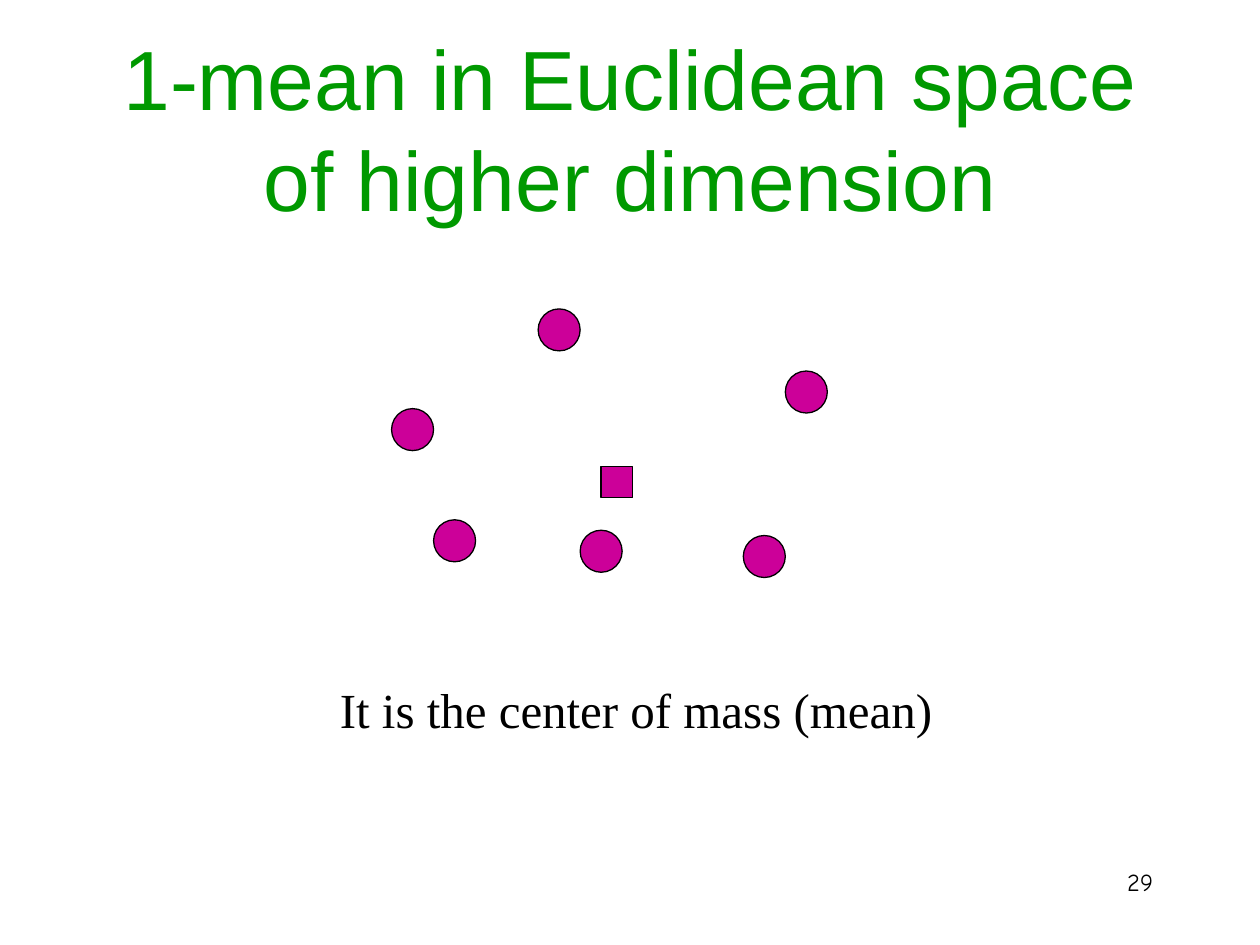
"""Build the slide on the 1-mean in Euclidean space."""
from pptx import Presentation
from pptx.dml.color import RGBColor
from pptx.enum.shapes import MSO_SHAPE
from pptx.enum.text import MSO_ANCHOR, PP_ALIGN
from pptx.util import Pt

HUES = {"title": "009900", "text": "000000", "mark": "CC0099", "line": "000000", "back": "FFFFFF"}

deck = Presentation()
deck.slide_width, deck.slide_height = Pt(720), Pt(540)
slide = deck.slides.add_slide(deck.slide_layouts[6])
back = slide.background.fill
back.solid()
back.fore_color.rgb = RGBColor.from_string(HUES["back"])


def add_text(text, box, font, size, hue="text", align=PP_ALIGN.CENTER, anchor=MSO_ANCHOR.TOP):
    frame = slide.shapes.add_textbox(*map(Pt, box)).text_frame
    frame.word_wrap = True
    frame.vertical_anchor = anchor
    para = frame.paragraphs[0]
    para.alignment = align
    run = para.add_run()
    run.text = text
    run.font.name = font
    run.font.size = Pt(size)
    run.font.color.rgb = RGBColor.from_string(HUES[hue])


def add_mark(kind, left, top, size):
    mark = slide.shapes.add_shape(kind, Pt(left), Pt(top), Pt(size), Pt(size))
    mark.shadow.inherit = False
    mark.fill.solid()
    mark.fill.fore_color.rgb = RGBColor.from_string(HUES["mark"])
    mark.line.color.rgb = RGBColor.from_string(HUES["line"])
    mark.line.width = Pt(0.75)


add_text("1-mean in Euclidean space of higher dimension", (54, 28, 612, 90),
         "Arial", 48, hue="title", anchor=MSO_ANCHOR.MIDDLE)
add_text("29", (516, 492, 150, 36), "Comic Neue", 14, align=PP_ALIGN.RIGHT)

dots = [(307.5, 176.5), (331.5, 303), (223.75, 233.5), (247.75, 297), (424.75, 306), (448.75, 212)]
for left, top in dots:
    add_mark(MSO_SHAPE.OVAL, left, top, 24)
add_mark(MSO_SHAPE.RECTANGLE, 343.5, 266.5, 18)

add_text(" It is the center of mass (mean)", (0, 385, 720, 41), "Times New Roman", 28)

deck.save("out.pptx")
